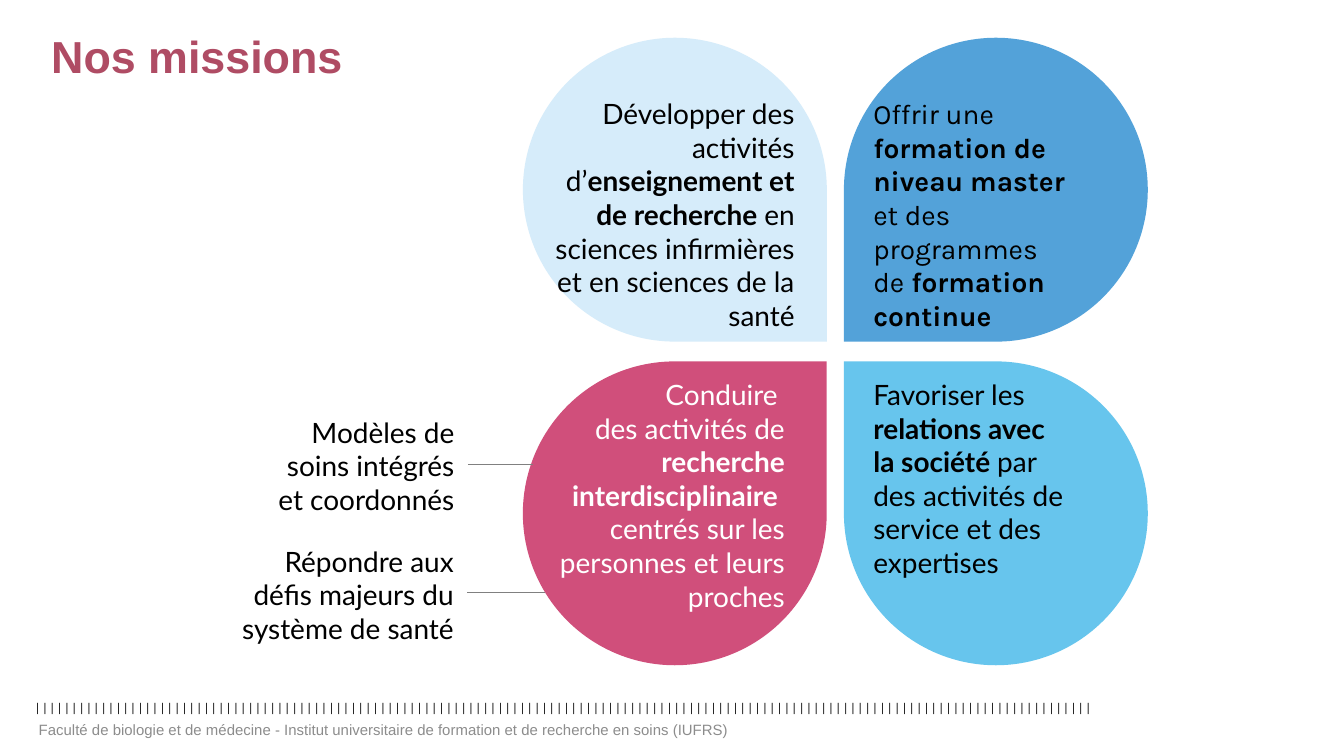
from lxml.etree import SubElement
from pptx import Presentation
from pptx.dml.color import RGBColor
from pptx.enum.shapes import MSO_CONNECTOR, MSO_SHAPE
from pptx.enum.text import MSO_ANCHOR, MSO_AUTO_SIZE, PP_ALIGN
from pptx.oxml.ns import qn
from pptx.util import Pt

BLACK, WHITE, GREY = "000000", "FFFFFF", "808080"


def color(value):
    return RGBColor.from_string(value)


def write(shape, paragraphs, font="Lato", size=15, ink=BLACK, align=PP_ALIGN.LEFT,
          bold=False, tracking=None, line_spacing=None):
    """Fill a shape with paragraphs; each is a list of runs that alternate in weight."""
    frame = shape.text_frame
    frame.word_wrap = True
    frame.auto_size = MSO_AUTO_SIZE.NONE
    frame.vertical_anchor = MSO_ANCHOR.TOP
    for index, runs in enumerate(paragraphs):
        para = frame.paragraphs[0] if index == 0 else frame.add_paragraph()
        para.alignment = align
        if line_spacing:
            para.line_spacing = line_spacing
        for position, text in enumerate(runs):
            span = para.add_run()
            span.text = text
            span.font.name = font
            span.font.size = Pt(size)
            span.font.bold = bold or position % 2 == 1
            span.font.color.rgb = color(ink)
            if tracking:
                span.font._element.set("spc", str(int(tracking * 100)))


def add_text(page, box, paragraphs, **style):
    write(page.shapes.add_textbox(*map(Pt, box)), paragraphs, **style)


def add_title(page, box, text):
    title = page.shapes.title
    title.left, title.top, title.width, title.height = map(Pt, box)
    write(title, [[text]], font="Arial", size=24, ink="AF4C64", bold=True, line_spacing=0.9)


def add_petals(page, box):
    """Four teardrops whose points meet in the middle of the box."""
    left, top, width, height = box
    side = 162.8
    petals = [(0, 0, 90, "D6ECFA"), (1, 0, 180, "53A2D9"),
              (0, 1, 0, "D04F7B"), (1, 1, 270, "67C5ED")]
    for column, row, turn, fill in petals:
        petal = page.shapes.add_shape(
            MSO_SHAPE.TEAR, Pt(left + column * (width - side)),
            Pt(top + row * (height - side)), Pt(side), Pt(side))
        petal.rotation = turn
        petal.shadow.inherit = False
        petal.fill.solid()
        petal.fill.fore_color.rgb = color(fill)
        petal.line.fill.background()


def add_missions(page, box):
    left, top, width, height = box
    lower = top + 150.4
    right = left + 201.6
    add_text(page, (left + 26, top, 147.6, 134.6),
             [["Développer des activités d’", "enseignement et de recherche ",
               "en sciences infirmières et en sciences de la santé"]],
             align=PP_ALIGN.RIGHT)
    add_text(page, (right, top, 119.5, 134.6),
             [["Offrir une ", "formation de niveau master ",
               "et des programmes de", " formation continue"]], font="Karla")
    add_text(page, (left, lower, 168.4, 134.6),
             [["Conduire "],
              ["des activités de ", "recherche interdisciplinaire "],
              ["centrés sur les personnes et leurs proches"]],
             ink=WHITE, align=PP_ALIGN.RIGHT)
    add_text(page, (right, lower, 119.5, 116.6),
             [["Favoriser les"],
              ["", "relations avec la société ",
               "par des activités de service et des expertises"]])


def add_callout(page, box, paragraphs, line_end, line_y):
    """Right-aligned note joined to a petal by a thin line."""
    left, top, width, height = box
    add_text(page, box, paragraphs, align=PP_ALIGN.RIGHT)
    line = page.shapes.add_connector(
        MSO_CONNECTOR.STRAIGHT, Pt(left + width), Pt(line_y), Pt(line_end), Pt(line_y))
    line.line.color.rgb = color(GREY)
    line.line.width = Pt(0.5)
    SubElement(line._element.spPr, qn("a:effectLst"))


def add_footer(page, box):
    left, top, width, height = box
    # Row of ticks above the institution's name
    add_text(page, (left, top, width, 23.8), [["|" * 144]],
             font="Calibri", size=6.8, tracking=0.8)
    add_text(page, (left + 2.2, top + 10.8, 384.5, 21.6),
             [["Faculté de biologie et de médecine - Institut universitaire "
               "de formation et de recherche en soins (IUFRS)"]],
             font="Arial", size=8, ink="8C8C8C")


def main():
    deck = Presentation()
    deck.slide_width, deck.slide_height = Pt(720), Pt(405)
    page = deck.slides.add_slide(deck.slide_layouts[5])
    add_footer(page, (11.5, 371.5, 589.7, 32.4))
    add_petals(page, (280.1, 20.2, 334.8, 336.2))
    add_missions(page, (259.2, 48.3, 321.1, 285))
    add_callout(page, (139.7, 218.9, 110.9, 61.9),
                [["Modèles de soins intégrés et coordonnés"]], 285.8, 248.6)
    add_callout(page, (119.8, 288, 130.5, 61.9),
                [["Répondre aux défis majeurs du"], ["système de santé"]], 291.8, 317.3)
    add_title(page, (20.2, 15.1, 680.4, 55.4), "Nos missions")
    deck.save("out.pptx")


if __name__ == "__main__":
    main()
